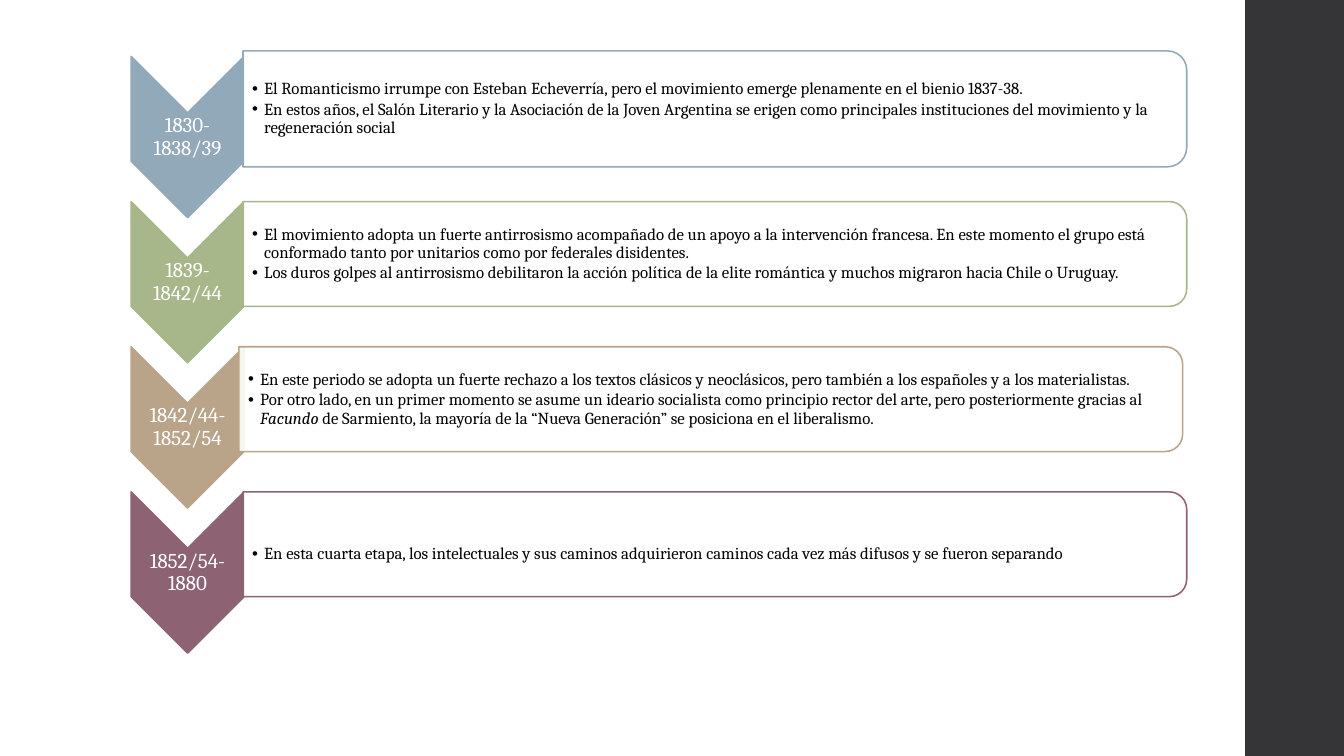
import dataclasses

import lxml.etree
import pptx
import pptx.dml.color
import pptx.enum.shapes
import pptx.enum.text
import pptx.oxml.ns
import pptx.util

Inches = pptx.util.Inches
Pt = pptx.util.Pt
Shape = pptx.enum.shapes.MSO_SHAPE
Align = pptx.enum.text.PP_ALIGN
qn = pptx.oxml.ns.qn


@dataclasses.dataclass(frozen=True)
class Theme:
    font: str = "Cambria"
    label_size: float = 15
    list_size: float = 12
    outline: float = 1.1
    white: str = "FFFFFF"
    black: str = "000000"
    band: str = "353537"


@dataclasses.dataclass(frozen=True)
class Stage:
    """A period; each point is a list of (text, italic) runs."""
    period: str
    color: str
    points: list
    frame_height: float = 1.04
    frame_shift: float = 0
    top_inset: float = 0.01


THEME = Theme()
COMPARISON_LAYOUT = 4
ROW_STEP = 1.44
CHEVRON_X, CHEVRON_Y = 1.86, 1.36
FRAME_LEFT, FRAME_Y, FRAME_WIDTH = 2.41, 1.08, 9.36

STAGES = [
    Stage("1830-1838/39", "92A9B9", [
        [("El Romanticismo irrumpe con Esteban Echeverría, pero el movimiento emerge "
          "plenamente en el bienio 1837-38.", False)],
        [("En estos años, el Salón Literario y la Asociación de la Joven Argentina se erigen "
          "como principales instituciones del movimiento y la regeneración social", False)],
    ], frame_height=1.15),
    Stage("1839-1842/44", "A7B789", [
        [("El movimiento adopta un fuerte antirrosismo acompañado de un apoyo a la "
          "intervención francesa. En este momento el grupo está conformado tanto por "
          "unitarios como por federales disidentes.", False)],
        [("Los duros golpes al antirrosismo debilitaron la acción política de la elite "
          "romántica y muchos migraron hacia Chile o Uruguay.", False)],
    ]),
    Stage("1842/44-1852/54", "B9A489", [
        [("En este periodo se adopta un fuerte rechazo a los textos clásicos y neoclásicos, "
          "pero también a los españoles y a los materialistas.", False)],
        [("Por otro lado, en un primer momento se asume un ideario socialista como principio "
          "rector del arte, pero posteriormente gracias al ", False),
         ("Facundo", True),
         (" de Sarmiento, la mayoría de la “Nueva Generación” se posiciona en el "
          "liberalismo.", False)],
    ], frame_shift=-0.04),
    Stage("1852/54-1880", "8D6374", [
        [("En esta cuarta etapa, los intelectuales y sus caminos adquirieron caminos cada vez "
          "más difusos y se fueron separando", False)],
    ], top_inset=0.21),
]


def rgb(color):
    return pptx.dml.color.RGBColor.from_string(color)


def apply_format(target, values):
    for name, value in values.items():
        setattr(target, name, value)


def format_frame(text_frame, left_inset=0.01, top_inset=0.01):
    apply_format(text_frame, {
        "word_wrap": True,
        "auto_size": pptx.enum.text.MSO_AUTO_SIZE.NONE,
        "vertical_anchor": pptx.enum.text.MSO_ANCHOR.MIDDLE,
        "margin_left": Inches(left_inset), "margin_top": Inches(top_inset),
        "margin_right": Inches(0.01), "margin_bottom": Inches(0.01),
    })


def format_paragraph(paragraph, alignment, size, color, space_after):
    apply_format(paragraph, {
        "alignment": alignment, "line_spacing": 0.9,
        "space_before": Pt(0), "space_after": Pt(space_after),
    })
    apply_format(paragraph.font, {"name": THEME.font, "size": Pt(size), "bold": False})
    for run in paragraph.runs:
        apply_format(run.font, {"name": THEME.font, "size": Pt(size), "bold": False})
        run.font.color.rgb = rgb(color)


def add_filled_shape(slide, kind, left, top, width, height, fill, line=None):
    shape = slide.shapes.add_shape(
        kind, Inches(left), Inches(top), Inches(width), Inches(height))
    shape.shadow.inherit = False
    shape.fill.solid()
    shape.fill.fore_color.rgb = rgb(fill)
    if line:
        shape.line.color.rgb = rgb(line)
        shape.line.width = Pt(THEME.outline)
    else:
        shape.line.fill.background()
    return shape


def add_turned_shape(slide, kind, center_x, center_y, length, breadth, fill, line):
    """Add a shape turned a quarter clockwise about its centre."""
    shape = add_filled_shape(slide, kind, center_x - length / 2, center_y - breadth / 2,
                             length, breadth, fill, line)
    shape.rotation = 90
    return shape


def set_opacity(shape, percent):
    color = shape.fill._xPr.find(qn("a:solidFill"))[0]
    lxml.etree.SubElement(color, qn("a:alpha")).set("val", str(percent * 1000))


def add_period_label(slide, text, center_y):
    width, height = 1.12, 0.48
    box = slide.shapes.add_textbox(Inches(CHEVRON_X - width / 2), Inches(center_y - height / 2),
                                   Inches(width), Inches(height))
    format_frame(box.text_frame)
    paragraph = box.text_frame.paragraphs[0]
    paragraph.add_run().text = text
    format_paragraph(paragraph, Align.CENTER, THEME.label_size, THEME.white, 5.25)


def add_bullet(paragraph):
    properties = paragraph._p.get_or_add_pPr()
    properties.set("marL", str(Inches(0.12)))
    properties.set("indent", str(Inches(-0.12)))
    lxml.etree.SubElement(properties, qn("a:buFont")).set("typeface", "Arial")
    lxml.etree.SubElement(properties, qn("a:buChar")).set("char", "•")


def fill_list(slide, placeholder, stage, left, center_y):
    height = stage.frame_height - 0.1
    apply_format(placeholder, {
        "left": Inches(left), "top": Inches(center_y - height / 2),
        "width": Inches(9.31), "height": Inches(height),
    })
    # The list must lie above its translucent frame.
    slide.shapes._spTree.append(placeholder._element)
    text_frame = placeholder.text_frame
    format_frame(text_frame, left_inset=0.09, top_inset=stage.top_inset)
    for index, point in enumerate(stage.points):
        paragraph = text_frame.add_paragraph() if index else text_frame.paragraphs[0]
        add_bullet(paragraph)
        for text, italic in point:
            run = paragraph.add_run()
            run.text = text
            run.font.italic = italic
        format_paragraph(paragraph, Align.LEFT, THEME.list_size, THEME.black, 1.8)


def add_stage(slide, placeholder, stage, offset):
    chevron_y, frame_y = CHEVRON_Y + offset, FRAME_Y + offset
    left = FRAME_LEFT + stage.frame_shift
    add_turned_shape(slide, Shape.CHEVRON, CHEVRON_X, chevron_y, 1.6, 1.12,
                     stage.color, stage.color)
    add_period_label(slide, stage.period, chevron_y)
    frame = add_turned_shape(slide, Shape.ROUND_2_SAME_RECTANGLE, left + FRAME_WIDTH / 2, frame_y,
                             stage.frame_height, FRAME_WIDTH, THEME.white, stage.color)
    set_opacity(frame, 90)
    fill_list(slide, placeholder, stage, left, frame_y)


def main():
    presentation = pptx.Presentation()
    presentation.slide_width = Inches(13.33)
    presentation.slide_height = Inches(7.5)
    slide = presentation.slides.add_slide(presentation.slide_layouts[COMPARISON_LAYOUT])
    title = slide.shapes.title._element
    title.getparent().remove(title)
    list_placeholders = list(slide.placeholders)
    add_filled_shape(slide, Shape.RECTANGLE, 12.35, 0, 0.98, 7.5, THEME.band)
    for row, (placeholder, stage) in enumerate(zip(list_placeholders, STAGES)):
        add_stage(slide, placeholder, stage, row * ROW_STEP)
    presentation.save("out.pptx")


if __name__ == "__main__":
    main()
